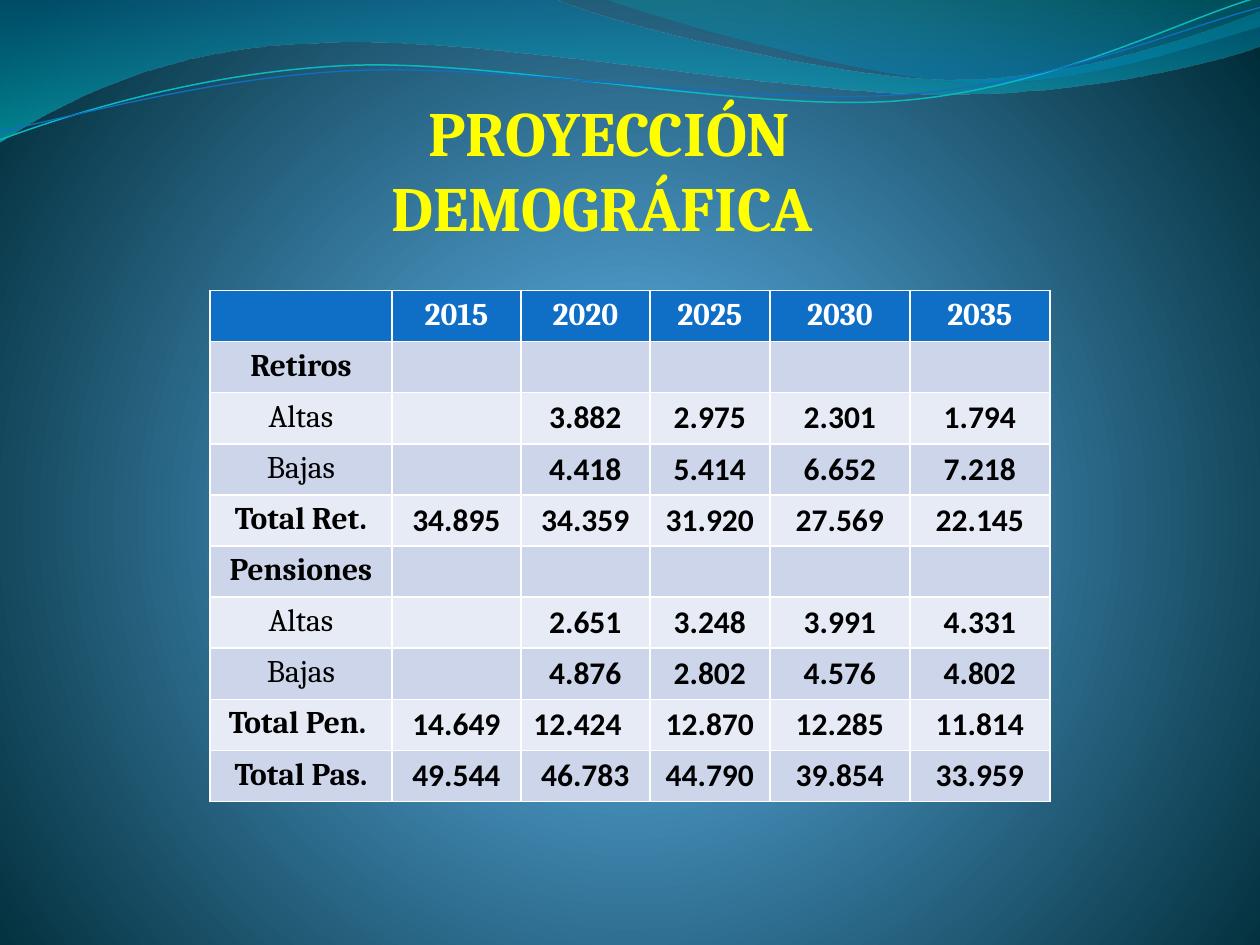
import math

from lxml import etree
from pptx import Presentation
from pptx.dml.color import RGBColor
from pptx.enum import text
from pptx.oxml import parse_xml
from pptx.oxml.ns import nsdecls, qn
from pptx.util import Pt

YELLOW = RGBColor(0xFF, 0xFF, 0x00)
WHITE = RGBColor(0xFF, 0xFF, 0xFF)
BLACK = RGBColor(0x00, 0x00, 0x00)
HEADER_BLUE = RGBColor(0x0F, 0x6F, 0xC6)
BAND_DARK = RGBColor(0xCC, 0xD5, 0xEA)
BAND_LIGHT = RGBColor(0xE7, 0xEB, 0xF5)
TEAL = RGBColor(0x0A, 0xB8, 0xBF)

TITLE = "PROYECCIÓN DEMOGRÁFICA "
ROWS = [
    ("", "2015", "2020", "2025", "2030", "2035"),
    ("Retiros", "", "", "", "", ""),
    ("Altas", "", "3.882", "2.975", "2.301", "1.794"),
    ("Bajas", "", "4.418", "5.414", "6.652", "7.218"),
    ("Total Ret.", "34.895", "34.359", "31.920", "27.569", "22.145"),
    ("Pensiones", "", "", "", "", ""),
    ("Altas", "", "2.651", "3.248", "3.991", "4.331"),
    ("Bajas", "", "4.876", "2.802", "4.576", "4.802"),
    ("Total Pen. ", "14.649", "12.424", "12.870", "12.285", "11.814"),
    ("Total Pas.", "49.544", "46.783", "44.790", "39.854", "33.959"),
]
COLUMN_WIDTHS = [104, 73.7, 73.7, 68.6, 80, 80]
ROW_HEIGHT = 29.2
LEFT_ALIGNED = "12.424"
PLAIN_LABELS = ("Altas", "Bajas")

# Gradient stops: position %, colour, opacity %
BACKGROUND_STOPS = [(0, "4AA0D6", 100), (25, "4C98C7", 100), (100, "002C38", 100)]
CIRCLE = '<a:path path="circle"><a:fillToRect l="10000" t="110000" r="10000" b="100000"/></a:path>'
DOWNWARD = '<a:lin ang="5400000" scaled="0"/>'

# Outlines: a start point, then lines (x, y) or Bézier curves (two controls, end)
BANDS = [
    ([(0, 0), (316.8, -0.7), (342.7, 12.2, 478.1, 45.4, 545.8, 45.4),
      (614.2, 45.4, 689.8, 18.7, 720, 6.5), (720.7, 25.9),
      (707.8, 31.7, 626.4, 54.7, 537.1, 54), (447.8, 54, 275, 20.2, 185, 24.5),
      (92.9, 25.9, 33.1, 59.8, -0.7, 81.4), (0, 0)],
     [(0, "0074A1", 45), (100, "00C6CF", 55)]),
    ([(344.9, -0.7), (366.5, 7.9, 491, 44.6, 553.7, 46.8),
      (616.3, 49.7, 691.9, 23, 720, 15.1), (720, 0)],
     [(0, "00A1A9", 30), (80, "008BBF", 45)]),
]
# Strands: outline, colour, width, centre of rotation
STRANDS = [
    ([(0, 79.9), (34.6, 67, 113.8, 41, 199.4, 37.4),
      (284.4, 33.8, 427, 64.1, 513.4, 57.6),
      (599.8, 51.1, 675.4, 10.8, 718.6, -1.4)], TEAL, 0.85, (359.3, 41.4)),
    ([(0, 74.9), (33.8, 69.1, 118.1, 43.9, 203.8, 40.3),
      (290.2, 36.7, 429.8, 60.5, 516.2, 54),
      (601.9, 48.2, 677.5, 15.1, 720, 4.3)], HEADER_BLUE, 0.75, (359.6, 42.5)),
]
STRAND_TILT = -2.7


def set_gradient(properties, stops, direction):
    """Replace the solid fill in a properties element with a gradient."""
    marks = "".join(
        f'<a:gs pos="{pos * 1000}"><a:srgbClr val="{color}">'
        f'<a:alpha val="{opacity * 1000}"/></a:srgbClr></a:gs>'
        for pos, color, opacity in stops)
    gradient = parse_xml(f'<a:gradFill {nsdecls("a")} rotWithShape="1">'
                         f'<a:gsLst>{marks}</a:gsLst>{direction}</a:gradFill>')
    solid = properties.find(qn("a:solidFill"))
    properties.replace(solid, gradient)


def rotate(outline, center, degrees):
    cx, cy = center
    cos, sin = math.cos(math.radians(degrees)), math.sin(math.radians(degrees))
    return [
        [value
         for x, y in zip(segment[::2], segment[1::2])
         for value in (cx + (x - cx) * cos - (y - cy) * sin,
                       cy + (x - cx) * sin + (y - cy) * cos)]
        for segment in outline]


def add_outline(slide, outline, close):
    """Build the outline from its points, then turn each triple into a curve."""
    start, *rest = [(Pt(x), Pt(y)) for segment in outline
                    for x, y in zip(segment[::2], segment[1::2])]
    builder = slide.shapes.build_freeform(*start, scale=1.0)
    builder.add_line_segments(rest, close=close)
    shape = builder.convert_to_shape()
    shape.shadow.inherit = False
    lines = iter(list(shape.element.iter(qn("a:lnTo"))))
    for segment in outline[1:]:
        first = next(lines)
        if len(segment) == 6:
            curve = etree.Element(qn("a:cubicBezTo"))
            first.addprevious(curve)
            for line in (first, next(lines), next(lines)):
                curve.append(line[0])
                line.getparent().remove(line)
    return shape


def add_waves(slide):
    for outline, stops in BANDS:
        band = add_outline(slide, outline, close=True)
        band.fill.solid()
        band.line.fill.background()
        set_gradient(band.element.spPr, stops, DOWNWARD)
    for outline, color, width, center in STRANDS:
        strand = add_outline(slide, rotate(outline, center, -STRAND_TILT), close=False)
        strand.rotation = STRAND_TILT
        strand.fill.background()
        strand.line.color.rgb = color
        strand.line.width = Pt(width)


def format_paragraph(paragraph, font_name, size, color, bold, align):
    paragraph.alignment = align
    for run in paragraph.runs:
        run.font.name = font_name
        run.font.size = Pt(size)
        run.font.color.rgb = color
        run.font.bold = bold


def set_title(slide):
    title = slide.shapes.title
    slide.shapes.element.append(title.element)  # in front of the waves
    title.left, title.top, title.width, title.height = Pt(122), Pt(-4.3), Pt(453.6), Pt(144)
    frame = title.text_frame
    frame.text = TITLE
    frame.word_wrap = True
    frame.auto_size = text.MSO_AUTO_SIZE.NONE
    frame.vertical_anchor = text.MSO_ANCHOR.BOTTOM
    frame.margin_left = frame.margin_top = frame.margin_bottom = 0
    frame.margin_right = Pt(1.44)
    format_paragraph(frame.paragraphs[0], "Cambria", 36, YELLOW, True, text.PP_ALIGN.CENTER)


def add_projection_table(slide):
    """Add the table; its default style draws the white borders."""
    table = slide.shapes.add_table(
        len(ROWS), len(COLUMN_WIDTHS), Pt(120), Pt(166),
        Pt(sum(COLUMN_WIDTHS)), Pt(ROW_HEIGHT * len(ROWS))).table
    for column, width in zip(table.columns, COLUMN_WIDTHS):
        column.width = Pt(width)
    for r, values in enumerate(ROWS):
        table.rows[r].height = Pt(ROW_HEIGHT)
        header = r == 0
        for c, value in enumerate(values):
            cell = table.cell(r, c)
            cell.text_frame.text = value
            cell.fill.solid()
            cell.fill.fore_color.rgb = (
                HEADER_BLUE if header else BAND_DARK if r % 2 else BAND_LIGHT)
            format_paragraph(
                cell.text_frame.paragraphs[0],
                "Cambria" if header or c == 0 else "Calibri", 18,
                WHITE if header else BLACK, value not in PLAIN_LABELS,
                text.PP_ALIGN.LEFT if value == LEFT_ALIGNED else text.PP_ALIGN.CENTER)


def main():
    presentation = Presentation()
    presentation.slide_width, presentation.slide_height = Pt(720), Pt(540)
    slide = presentation.slides.add_slide(presentation.slide_layouts[5])
    slide.background.fill.solid()
    background = slide.element.find(".//" + qn("p:bgPr"))
    set_gradient(background, BACKGROUND_STOPS, CIRCLE)
    add_waves(slide)
    set_title(slide)
    add_projection_table(slide)
    presentation.save("out.pptx")


if __name__ == "__main__":
    main()
